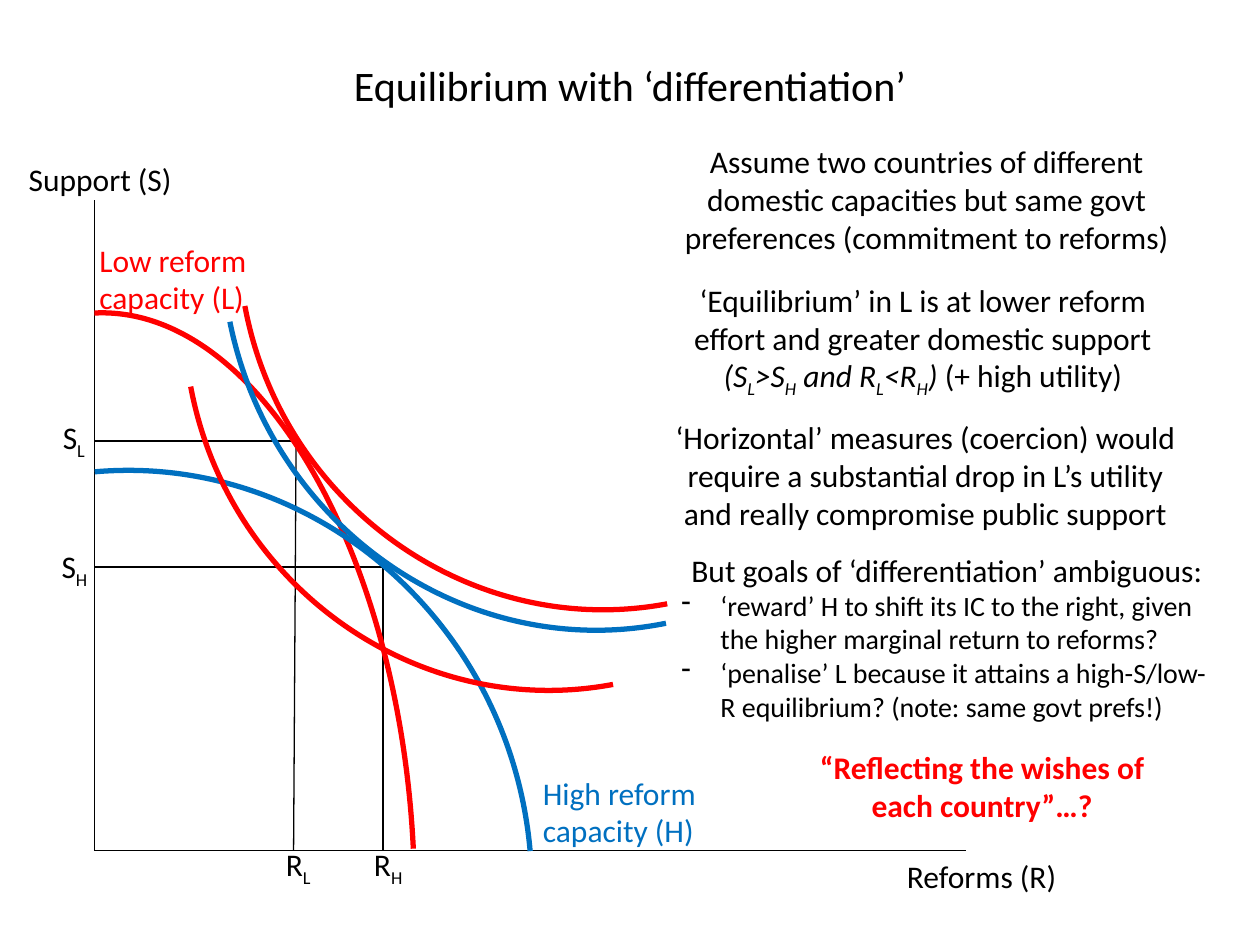
from lxml.etree import SubElement
from pptx import Presentation
from pptx.dml.color import RGBColor
from pptx.enum.shapes import MSO_CONNECTOR
from pptx.enum.text import MSO_ANCHOR, PP_ALIGN
from pptx.oxml.ns import qn
from pptx.util import Inches, Pt

COLORS = {"black": "000000", "red": "FF0000", "blue": "0070C0"}
LEFT, CENTER = PP_ALIGN.LEFT, PP_ALIGN.CENTER


def style_span(span, size, color="black", style=""):
    span.font.name = "Calibri"
    span.font.size = Pt(size)
    span.font.color.rgb = RGBColor.from_string(COLORS[color])
    if "b" in style:
        span.font.bold = True
    if "i" in style:
        span.font.italic = True
    if "_" in style:
        span.font._element.set("baseline", "-25000")


def add_text(place, spans, color="black", align=LEFT, wrap=True):
    box = page.shapes.add_textbox(*[Inches(value) for value in place])
    box.text_frame.word_wrap = wrap
    para = box.text_frame.paragraphs[0]
    para.alignment = align
    for text, style in spans:
        span = para.add_run()
        span.text = text
        style_span(span, 18, color, style)
    return box


deck = Presentation()
deck.slide_width, deck.slide_height = Inches(10), Inches(7.5)
page = deck.slides.add_slide(deck.slide_layouts[5])

title = page.shapes.title
title.left, title.top = Inches(0.5), Inches(0.05)
title.width, title.height = Inches(9), Inches(1.25)
title.text_frame.text = "Equilibrium with ‘differentiation’"
title.text_frame.vertical_anchor = MSO_ANCHOR.MIDDLE
title.text_frame.paragraphs[0].alignment = CENTER
style_span(title.text_frame.paragraphs[0].runs[0], 24)

axis_x, axis_y = 0.75, 6.75
low_support, high_support = 3.5, 4.5
low_reform, high_reform = 2.35, 3.04
lines = [
    (axis_x, 1.59, axis_x, axis_y),
    (axis_x, axis_y, 7.67, axis_y),
    (high_reform, high_support, high_reform, axis_y),
    (low_reform, low_support, 2.33, axis_y),
    (low_reform, low_support, axis_x, low_support),
    (high_reform, high_support, axis_x, high_support),
]
for ends in lines:
    line = page.shapes.add_connector(MSO_CONNECTOR.STRAIGHT, *[Inches(value) for value in ends])
    line.line.color.rgb = RGBColor.from_string(COLORS["black"])
    line.line.width = Pt(0.75)
    SubElement(line._element.spPr, qn("a:effectLst"))

curves = [
    (-0.17, 3.45, 4.37, 2.32, 87.2, "red"),
    (0.83, 3.66, 3.3, 3.18, 85, "blue"),
    (2.15, 2.18, 2.94, 2.86, 259.4, "red"),
    (2.04, 2.29, 3.03, 2.92, 258.6, "blue"),
    (1.72, 2.82, 2.94, 2.86, 259.4, "red"),
]
bend = 1 - 0.55
for left, top, width, height, angle, color in curves:
    width, height = Inches(width), Inches(height)
    builder = page.shapes.build_freeform(width, 0)
    builder.add_line_segments([(0, height)], close=False)
    curve = builder.convert_to_shape(Inches(left), Inches(top))
    outline = curve._element.find(".//" + qn("a:path"))
    outline.remove(outline.find(qn("a:lnTo")))
    quarter = SubElement(outline, qn("a:cubicBezTo"))
    for x, y in [(width * bend, 0), (0, height * bend), (0, height)]:
        SubElement(quarter, qn("a:pt"), x=str(int(x)), y=str(int(y)))
    curve.rotation = angle
    curve.shadow.inherit = False
    curve.fill.background()
    curve.line.color.rgb = RGBColor.from_string(COLORS[color])
    curve.line.width = Pt(3)

labels = [
    ((7.1, 6.75, 1.4, 0.4), [("Reforms (R)", "")]),
    ((0.13, 1.22, 1.36, 0.4), [("Support (S)", "")]),
    ((2.17, 6.66, 0.41, 0.4), [("R", ""), ("L", "_")]),
    ((2.87, 6.66, 0.44, 0.4), [("R", ""), ("H", "_")]),
    ((0.4, 3.27, 0.4, 0.4), [("S", ""), ("L", "_")]),
    ((0.39, 4.29, 0.44, 0.4), [("S", ""), ("H", "_")]),
]
for place, spans in labels:
    add_text(place, spans, wrap=False)

add_text((0.69, 1.86, 1.38, 0.71), [("Low reform capacity (L)", "")], "red")
add_text((4.21, 6.09, 1.51, 0.71), [("High reform capacity (H)", "")], "blue")

add_text((5.31, 1.08, 4.09, 1.01), [
    ("Assume two countries of different domestic capacities but same govt "
     "preferences (commitment to reforms)", ""),
], align=CENTER)
add_text((5.24, 2.18, 4.17, 1.01), [
    ("‘Equilibrium’ in L is at lower reform effort and greater domestic support ", ""),
    ("(S", "i"), ("L", "i_"), (">S", "i"), ("H", "i_"),
    (" and R", "i"), ("L", "i_"), ("<R", "i"), ("H", "i_"), (") ", "i"),
    ("(+ high utility)", ""),
], align=CENTER)
add_text((5.18, 3.27, 4.33, 1.01), [
    ("‘Horizontal’ measures (coercion) would require a substantial drop in L’s "
     "utility and really compromise public support", ""),
], align=CENTER)
add_text((6.26, 5.89, 3.07, 0.71), [
    ("“Reflecting the wishes of each country”…?", "b"),
], "red", CENTER)

goals = add_text((5.31, 4.32, 4.41, 1.48), [
    ("But goals of ‘differentiation’ ambiguous:", ""),
], align=CENTER)
for text in [
    "‘reward’ H to shift its IC to the right, given the higher marginal return to reforms?",
    "‘penalise’ L because it attains a high-S/low-R equilibrium? (note: same govt prefs!)",
]:
    para = goals.text_frame.add_paragraph()
    para.text = text
    para.alignment = LEFT
    style_span(para.runs[0], 16)
    settings = para._p.get_or_add_pPr()
    settings.set("marL", str(Inches(0.31)))
    settings.set("indent", str(-Inches(0.31)))
    SubElement(settings, qn("a:buChar"), char="-")

deck.save("out.pptx")
